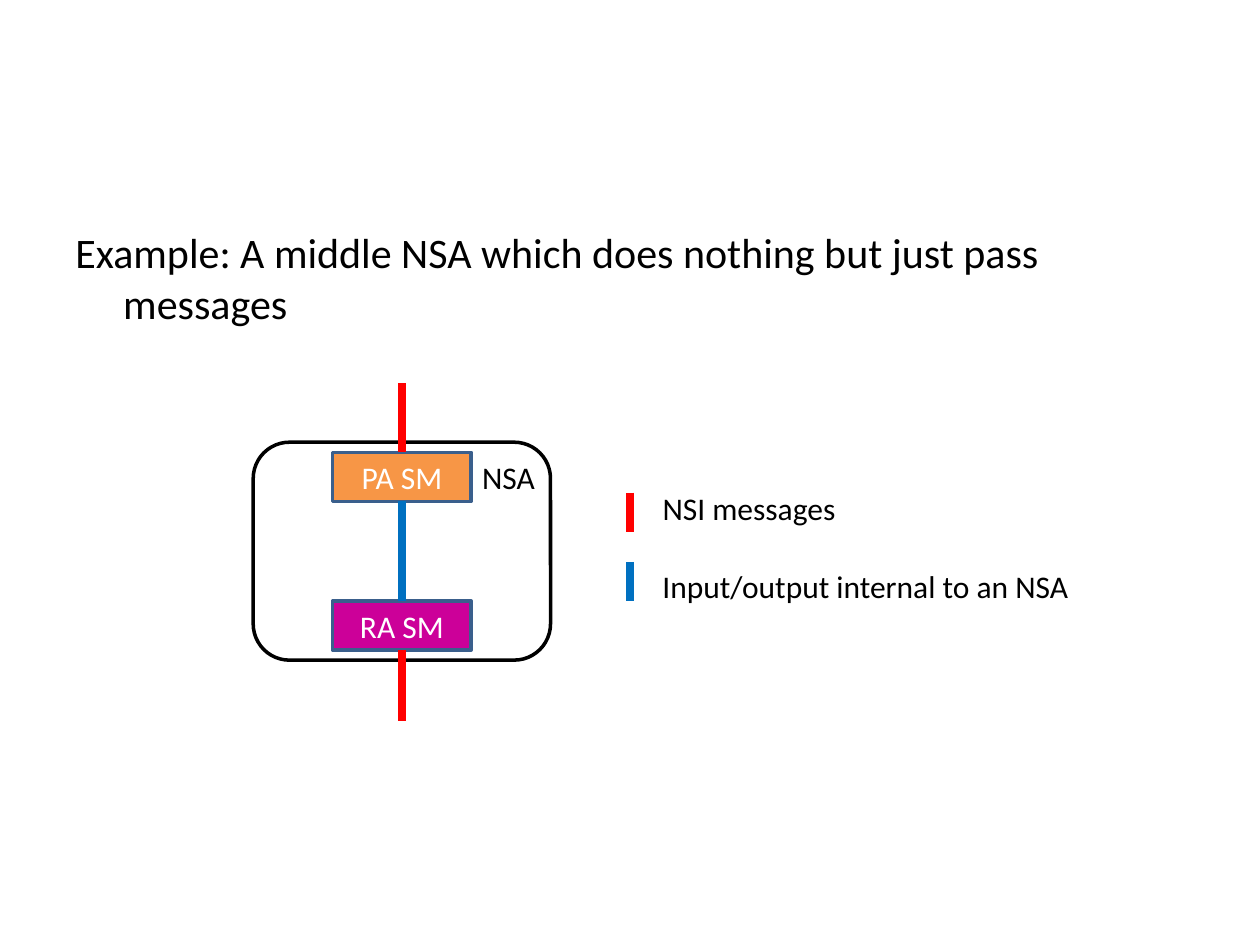
from dataclasses import dataclass

from lxml import etree
from pptx import Presentation
from pptx.dml.color import RGBColor
from pptx.enum.shapes import MSO_CONNECTOR, MSO_SHAPE
from pptx.enum.text import MSO_ANCHOR, MSO_AUTO_SIZE, PP_ALIGN
from pptx.oxml.ns import qn
from pptx.util import Inches, Pt

RECTANGLE = MSO_SHAPE.RECTANGLE
ROUNDED = MSO_SHAPE.ROUNDED_RECTANGLE
STRAIGHT = MSO_CONNECTOR.STRAIGHT
TOP, MIDDLE = MSO_ANCHOR.TOP, MSO_ANCHOR.MIDDLE
LEFT, CENTER, RIGHT = PP_ALIGN.LEFT, PP_ALIGN.CENTER, PP_ALIGN.RIGHT
FIT_SHAPE, NO_FIT = MSO_AUTO_SIZE.SHAPE_TO_FIT_TEXT, MSO_AUTO_SIZE.NONE
TOP_SIDE, BOTTOM_SIDE = 0, 2


@dataclass(frozen=True)
class Theme:
    font: str = "Calibri"
    heading_size: float = 24
    label_size: float = 18
    outline_width: float = 2
    link_width: float = 4.5
    black: str = "000000"
    white: str = "FFFFFF"
    box_outline: str = "3A5F8C"
    provider: str = "F79646"
    requester: str = "CC0099"
    message: str = "FF0000"
    internal: str = "0070C0"


class SlideBuilder:
    def __init__(self, page, theme):
        self.page = page
        self.theme = theme

    def set_text(self, frame, text, size, color, align):
        para = frame.paragraphs[0]
        para.text = text
        para.alignment = align
        para.font.name = self.theme.font
        para.font.size = Pt(size)
        para.font.color.rgb = RGBColor.from_string(color)
        return para

    def box(self, kind, area, text, color, align, anchor, outline, fill=None):
        box = self.page.shapes.add_shape(kind, *map(Inches, area))
        box.shadow.inherit = False
        if fill:
            box.fill.solid()
            box.fill.fore_color.rgb = RGBColor.from_string(fill)
        else:
            box.fill.background()
        box.line.color.rgb = RGBColor.from_string(outline)
        box.line.width = Pt(self.theme.outline_width)
        frame = box.text_frame
        frame.vertical_anchor = anchor
        frame.margin_left = frame.margin_right = Inches(0.04)
        frame.margin_top = frame.margin_bottom = Inches(0.04)
        self.set_text(frame, text, self.theme.label_size, color, align)
        return box

    def link(self, x, top, bottom, color, upper=None, lower=None):
        link = self.page.shapes.add_connector(
            STRAIGHT, Inches(x), Inches(top), Inches(x), Inches(bottom))
        if upper:
            link.begin_connect(upper, BOTTOM_SIDE)
        if lower:
            link.end_connect(lower, TOP_SIDE)
        link.line.color.rgb = RGBColor.from_string(color)
        link.line.width = Pt(self.theme.link_width)
        properties = link._element.spPr
        etree.SubElement(properties, qn("a:effectLst"))

    def text(self, area, text, size, wrap=False):
        box = self.page.shapes.add_textbox(*map(Inches, area))
        frame = box.text_frame
        frame.word_wrap = wrap
        frame.auto_size = NO_FIT if wrap else FIT_SHAPE
        return self.set_text(frame, text, size, self.theme.black, LEFT)

    def heading(self, area, text):
        size = self.theme.heading_size
        para = self.text(area, text, size, wrap=True)
        para.space_before = Pt(size * 0.2)
        hanging = Inches(0.38)
        properties = para._p.get_or_add_pPr()
        properties.set("marL", str(hanging))
        properties.set("indent", str(-hanging))


def main():
    deck = Presentation()
    deck.slide_width, deck.slide_height = Inches(10), Inches(7.5)
    theme = Theme()
    builder = SlideBuilder(deck.slides.add_slide(deck.slide_layouts[6]), theme)

    builder.box(ROUNDED, (2.01, 3.51, 2.36, 1.73), "NSA",
                theme.black, RIGHT, TOP, theme.black)
    provider, requester = [
        builder.box(RECTANGLE, (2.64, top, 1.1, 0.39), text,
                    theme.white, CENTER, MIDDLE, theme.box_outline, fill)
        for top, text, fill in ((3.59, "PA SM", theme.provider),
                                (4.77, "RA SM", theme.requester))]

    axis = 3.19
    builder.link(axis, 3.04, 3.59, theme.message, lower=provider)
    builder.link(axis, 5.16, 5.72, theme.message, upper=requester)
    builder.link(axis, 3.98, 4.77, theme.internal, provider, requester)

    legend = (
        (3.91, 3.83, 1.65, "NSI messages", theme.message),
        (4.46, 4.45, 3.46, "Input/output internal to an NSA", theme.internal),
    )
    for key_top, text_top, width, text, color in legend:
        builder.link(5, key_top, key_top + 0.31, color)
        builder.text((5.16, text_top, width, 0.4), text, theme.label_size)

    builder.heading(
        (0.5, 1.75, 9, 1.21),
        "Example: A middle NSA which does nothing but just pass messages")
    deck.save("out.pptx")


if __name__ == "__main__":
    main()
